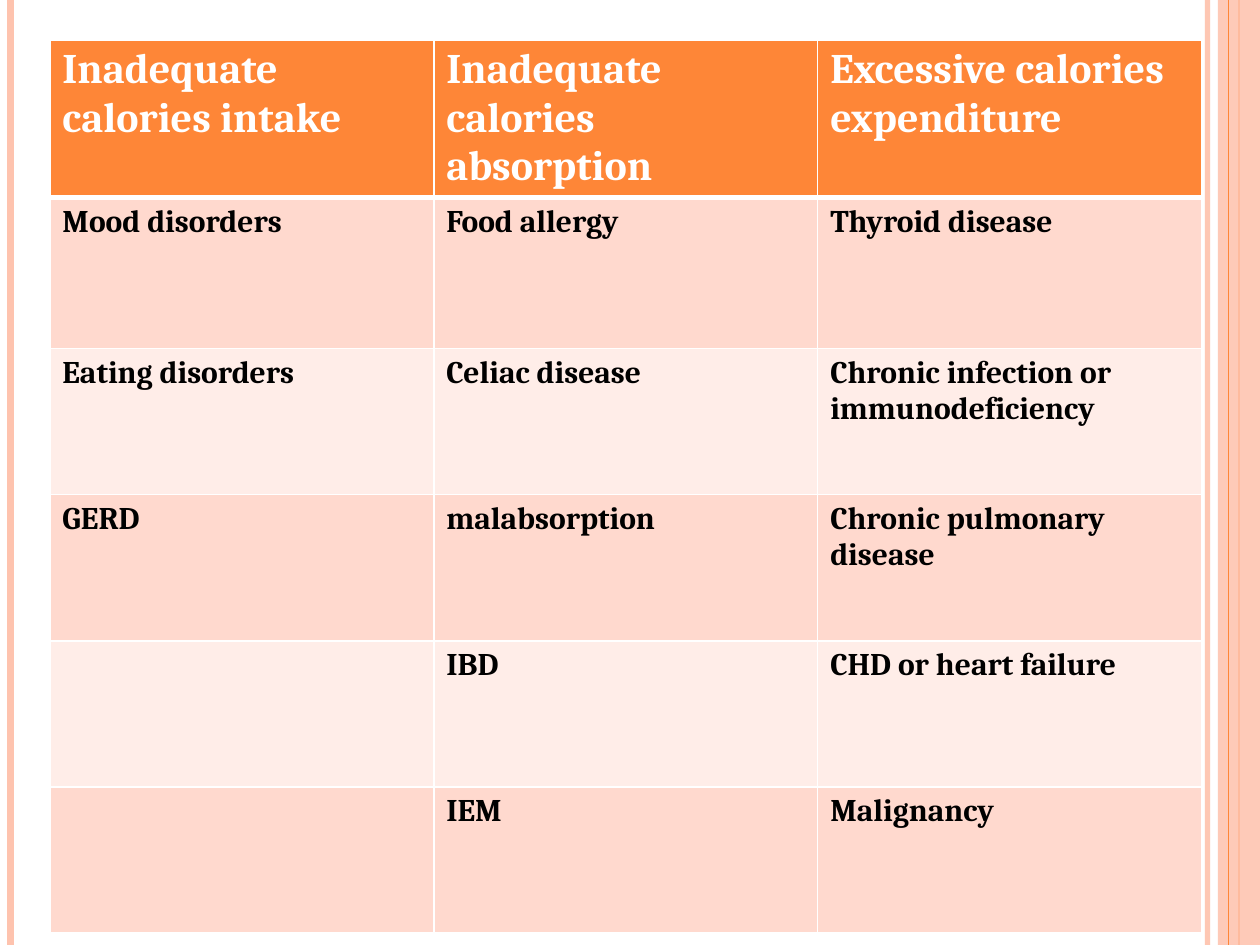
from lxml import etree
from pptx import Presentation
from pptx import util as u
from pptx.dml.color import RGBColor
from pptx.enum import shapes
from pptx.oxml import ns

COLORS = {
    "orange": "FE8637",
    "peach": "FEC3AE",
    "band_dark": "FFD9CE",
    "band_light": "FFEDE8",
    "white": "FFFFFF",
    "black": "000000",
}
FONT = "Cambria"
PAGE_WIDTH, PAGE_HEIGHT = 720, 540
TABLE_LEFT, TABLE_TOP = 28.5, 22.75
COLUMN_WIDTH = 219.4
ROW_HEIGHTS = [83.5, 86.4] + [83.5] * 4
ROWS = [
    ["Inadequate calories intake", "Inadequate calories absorption",
     "Excessive calories expenditure"],
    ["Mood disorders", "Food allergy", "Thyroid disease"],
    ["Eating disorders", "Celiac disease", "Chronic infection or immunodeficiency"],
    ["GERD", "malabsorption", "Chronic pulmonary disease"],
    ["", "IBD", "CHD or heart failure"],
    ["", "IEM", "Malignancy"],
]


def rgb(name):
    return RGBColor.from_string(COLORS[name])


def add_child(parent, tag, **attributes):
    return etree.SubElement(parent, ns.qn(tag), attributes)


def set_alpha(fill_parent, percent):
    """Make the solid fill inside the given element partly transparent."""
    color = fill_parent.find(ns.qn("a:solidFill"))[0]
    add_child(color, "a:alpha", val=str(percent * 1000))


def add_stripe(page, x, color, width, opacity=100):
    """Draw a vertical line over the full height of the page."""
    stripe = page.shapes.add_connector(
        shapes.MSO_CONNECTOR.STRAIGHT, u.Pt(x), 0, u.Pt(x), u.Pt(PAGE_HEIGHT))
    stripe.line.color.rgb = rgb(color)
    stripe.line.width = u.Pt(width)
    if opacity < 100:
        set_alpha(stripe.line._ln, opacity)
    add_child(stripe._element.spPr, "a:effectLst")


def add_side_band(page, left, color, opacity):
    band = page.shapes.add_shape(
        shapes.MSO_SHAPE.RECTANGLE, u.Pt(left), 0,
        u.Pt(PAGE_WIDTH - left), u.Pt(PAGE_HEIGHT))
    band.shadow.inherit = False
    band.fill.solid()
    band.fill.fore_color.rgb = rgb(color)
    set_alpha(band._element.spPr, opacity)
    band.line.fill.background()


def set_borders(cell, widths):
    properties = cell._tc.get_or_add_tcPr()
    for side, width in widths.items():
        line = add_child(properties, f"a:ln{side}", w=str(u.Pt(width)))
        fill = add_child(line, "a:solidFill")
        add_child(fill, "a:srgbClr", val=COLORS["white"])


def fill_cell(cell, words, fill, borders, font_format):
    set_borders(cell, borders)
    cell.fill.solid()
    cell.fill.fore_color.rgb = rgb(fill)
    para = cell.text_frame.paragraphs[0]
    font = para.font
    if words:
        span = para.add_run()
        span.text = words
        font = span.font
    for name, value in font_format.items():
        setattr(font, name, value)
    font.color.rgb = rgb("white" if fill == "orange" else "black")


def add_causes_table(page):
    count = len(ROWS[0])
    table = page.shapes.add_table(
        len(ROWS), count, u.Pt(TABLE_LEFT), u.Pt(TABLE_TOP),
        u.Pt(COLUMN_WIDTH * count), u.Pt(sum(ROW_HEIGHTS))).table
    table.horz_banding = False
    for column in table.columns:
        column.width = u.Pt(COLUMN_WIDTH)
    for r, (height, row) in enumerate(zip(ROW_HEIGHTS, ROWS)):
        table.rows[r].height = u.Pt(height)
        fill = "orange" if r == 0 else ("band_light", "band_dark")[r % 2]
        borders = {"L": 1, "R": 1, "T": 3 if r == 1 else 1, "B": 3 if r == 0 else 1}
        font_format = {"name": FONT, "bold": True, "size": u.Pt(24 if r == 0 else 18)}
        for c, words in enumerate(row):
            fill_cell(table.cell(r, c), words, fill, borders, font_format)


def main():
    deck = Presentation()
    deck.slide_width, deck.slide_height = u.Pt(PAGE_WIDTH), u.Pt(PAGE_HEIGHT)
    page = deck.slides.add_slide(deck.slide_layouts[6])
    add_stripe(page, 690, "peach", 3, 93)
    add_stripe(page, 6, "peach", 4.5)
    add_stripe(page, 708, "orange", 1.5)
    add_side_band(page, 696, "peach", 87)
    add_stripe(page, 702, "orange", 0.75)
    add_causes_table(page)
    deck.save("out.pptx")


if __name__ == "__main__":
    main()
